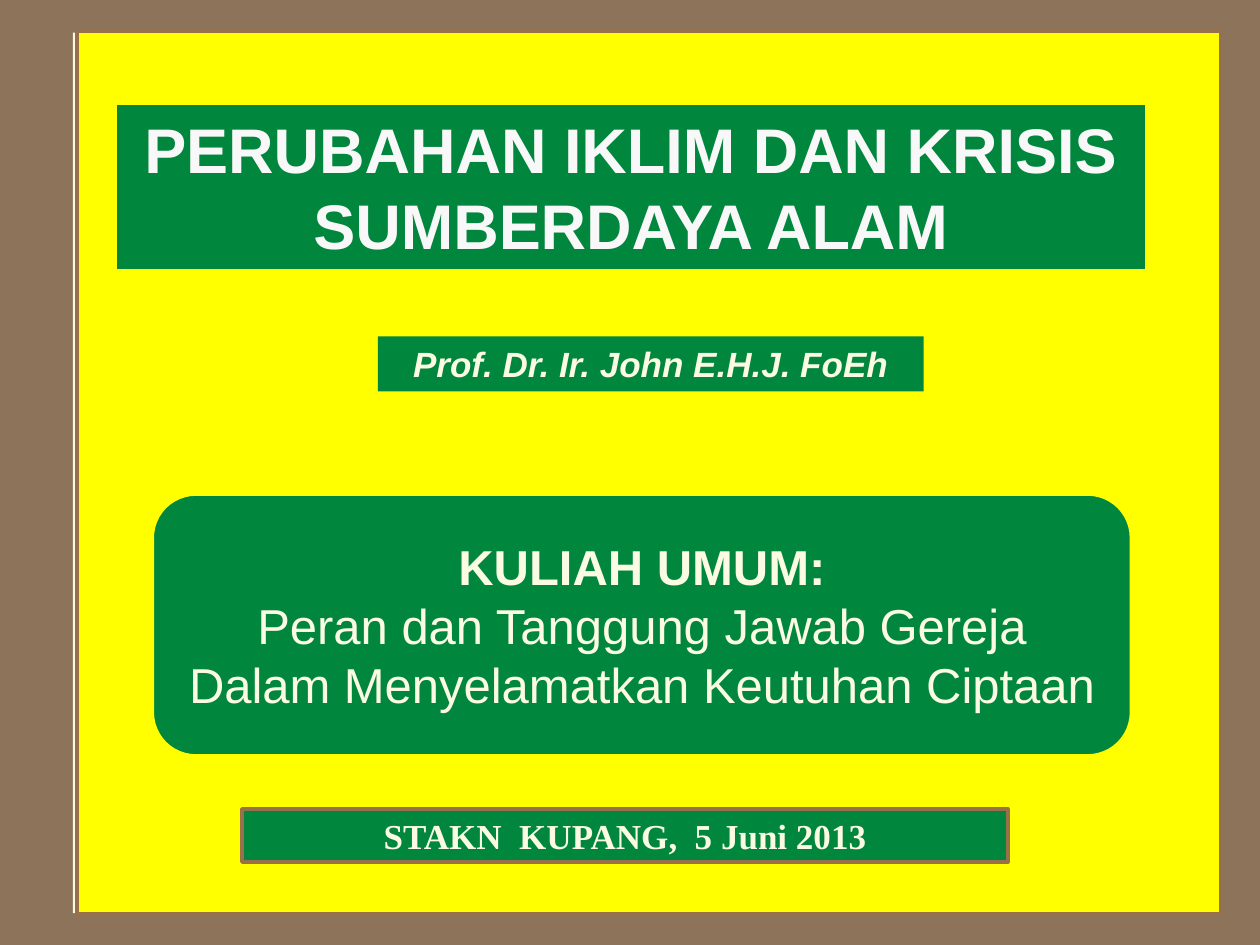
from pptx import Presentation
from pptx import util as u
from pptx.dml.color import RGBColor
from pptx.enum import shapes, text

BROWN = RGBColor(0x8C, 0x73, 0x5A)
EDGE = RGBColor(0x98, 0x71, 0x4A)
CREAM = RGBColor(0xFB, 0xFA, 0xE2)
WHITE = RGBColor(0xF8, 0xF8, 0xF8)
YELLOW = RGBColor(0xFF, 0xFF, 0x00)
GREEN = RGBColor(0x00, 0x86, 0x3D)
RECT = shapes.MSO_SHAPE.RECTANGLE
ROUND = shapes.MSO_SHAPE.ROUNDED_RECTANGLE
TOP, MID = text.MSO_ANCHOR.TOP, text.MSO_ANCHOR.MIDDLE
GROW, FIXED = text.MSO_AUTO_SIZE.SHAPE_TO_FIT_TEXT, text.MSO_AUTO_SIZE.NONE


class Deck:
    """Hold the style and the current slide."""

    def __init__(self):
        self.prs = Presentation()
        self.prs.slide_width, self.prs.slide_height = u.Cm(25.4), u.Cm(19.05)
        self.base = {"name": "Arial", "bold": True, "italic": False}
        self.slide = self.prs.slides.add_slide(self.prs.slide_layouts[5])
        back = self.slide.background.fill
        back.solid()
        back.fore_color.rgb = BROWN

    def paint(self, shape, fill, edge=None, width=0):
        shape.fill.solid()
        shape.fill.fore_color.rgb = fill
        if edge is None:
            shape.line.fill.background()
        else:
            shape.line.color.rgb = edge
            shape.line.width = u.Pt(width)

    def box(self, area, fill, edge=None, width=0, kind=RECT):
        shape = self.slide.shapes.add_shape(kind, *map(u.Cm, area))
        shape.shadow.inherit = False
        self.paint(shape, fill, edge, width)
        return shape

    def title(self, area, fill, edge, width):
        shape = self.slide.shapes.title
        shape.element.getparent().append(shape.element)
        for key, val in zip(("left", "top", "width", "height"), area):
            setattr(shape, key, u.Cm(val))
        self.paint(shape, fill, edge, width)
        return shape

    def label(self, shape, lines, size, color=CREAM, anchor=MID, fit=FIXED, **extra):
        frame = shape.text_frame
        frame.text = "\n".join(lines)
        look = {"word_wrap": True, "vertical_anchor": anchor, "auto_size": fit}
        for key, val in look.items():
            setattr(frame, key, val)
        for par in frame.paragraphs:
            par.alignment = text.PP_ALIGN.CENTER
            for run in par.runs:
                for key, val in {**self.base, "size": u.Pt(size), **extra}.items():
                    setattr(run.font, key, val)
                run.font.color.rgb = color
        return frame


def main():
    deck = Deck()
    deck.box((1.47, 0.66, 23.16, 17.75), CREAM)
    deck.box((1.55, 0.64, 23.06, 17.78), YELLOW, EDGE, 2)

    head = deck.title((2.34, 2.11, 20.75, 3.33), GREEN, YELLOW, 0.75)
    deck.label(head, ["PERUBAHAN IKLIM DAN KRISIS SUMBERDAYA ALAM"], 36,
               WHITE, TOP, GROW)

    name = deck.box((7.62, 6.78, 11, 1.11), GREEN)
    deck.label(name, ["Prof. Dr. Ir. John E.H.J. FoEh"], 20,
               anchor=TOP, fit=GROW, italic=True)

    theme = deck.box((3.07, 9.96, 19.74, 5.28), GREEN, YELLOW, 2, ROUND)
    frame = deck.label(theme, ["KULIAH UMUM:", "Peran dan Tanggung Jawab Gereja",
                               "Dalam Menyelamatkan Keutuhan Ciptaan"], 28)
    for par in frame.paragraphs[1:]:
        par.runs[0].font.bold = False

    place = deck.box((4.88, 16.31, 15.44, 1.07), GREEN, EDGE, 2)
    deck.label(place, ["STAKN  KUPANG,  5 Juni 2013"], 20, name="Times New Roman")

    deck.prs.save("out.pptx")


if __name__ == "__main__":
    main()
